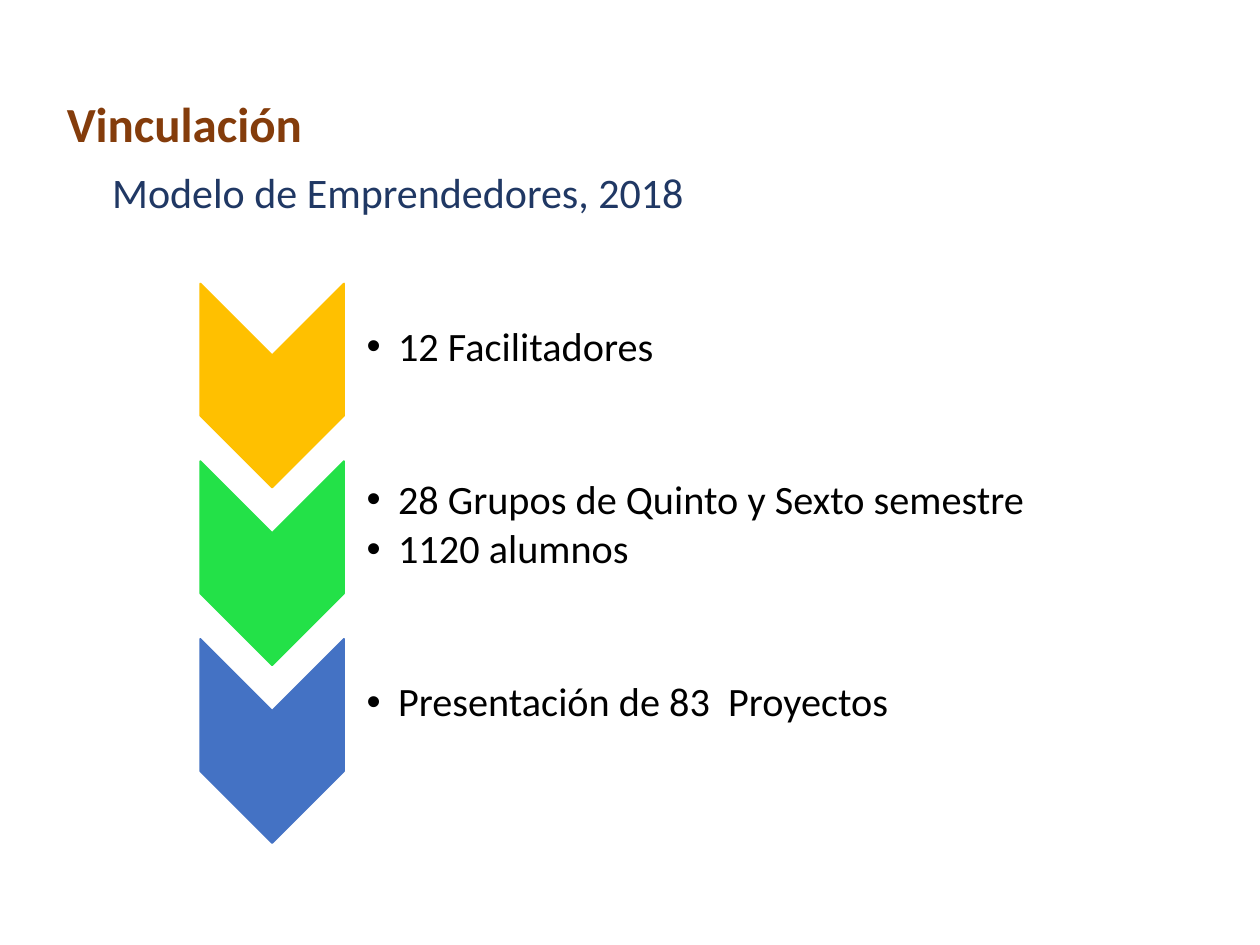
from lxml.etree import SubElement
from pptx import Presentation
from pptx.dml.color import RGBColor
from pptx.enum.shapes import MSO_SHAPE
from pptx.enum.text import MSO_ANCHOR, MSO_AUTO_SIZE, PP_ALIGN
from pptx.oxml.ns import qn
from pptx.util import Inches, Pt

BROWN = RGBColor(0x84, 0x3C, 0x0B)
NAVY = RGBColor(0x20, 0x38, 0x64)
BLACK = RGBColor(0x00, 0x00, 0x00)
AMBER = RGBColor(0xFF, 0xC0, 0x00)
GREEN = RGBColor(0x23, 0xE1, 0x48)
BLUE = RGBColor(0x44, 0x72, 0xC4)

FONT = "Calibri"
COMPARISON_LAYOUT = 4
STAGES = [
    (AMBER, ["12 Facilitadores"]),
    (GREEN, ["28 Grupos de Quinto y Sexto semestre", "1120 alumnos"]),
    (BLUE, ["Presentación de 83  Proyectos"]),
]
STAGE_TOP, STAGE_PITCH = 2.29, 1.41


def place(holder, left, top, width, height, anchor):
    holder.left, holder.top = Inches(left), Inches(top)
    holder.width, holder.height = Inches(width), Inches(height)
    frame = holder.text_frame
    frame.word_wrap = True
    frame.auto_size = MSO_AUTO_SIZE.NONE
    frame.vertical_anchor = anchor
    return frame


def style(paragraph, size, color, bold=False):
    paragraph.alignment = PP_ALIGN.LEFT
    paragraph.space_before = Pt(0)
    font = paragraph.font
    font.name, font.size, font.bold = FONT, Pt(size), bold
    font.color.rgb = color


def set_bullet(paragraph, indent):
    """Give the paragraph a round bullet, or none when indent is 0."""
    props = paragraph._p.get_or_add_pPr()
    props.set("marL", str(Inches(indent)))
    props.set("indent", str(-Inches(indent)))
    if indent:
        SubElement(props, qn("a:buFont"), typeface="Arial")
        SubElement(props, qn("a:buChar"), char="•")
    else:
        SubElement(props, qn("a:buNone"))


def fill_heading(holder, text, box, size, color, bold=False):
    frame = place(holder, *box, MSO_ANCHOR.TOP)
    frame.text = text
    heading = frame.paragraphs[0]
    set_bullet(heading, 0)
    style(heading, size, color, bold)


def fill_list(holder, items, top):
    frame = place(holder, 2.73, top, 5.48, 0.95, MSO_ANCHOR.MIDDLE)
    frame.margin_left = Inches(0.18)
    frame.margin_top = frame.margin_right = frame.margin_bottom = Inches(0.02)
    frame.text = "\n".join(items)
    for item in frame.paragraphs:
        set_bullet(item, 0.25)
        style(item, 23, BLACK)
        item.line_spacing = 0.9
        item.space_after = Pt(3.5)


def add_chevron(slide, color, top):
    chevron = slide.shapes.add_shape(
        MSO_SHAPE.CHEVRON, Inches(1.35), Inches(top), Inches(1.62), Inches(1.14))
    chevron.rotation = 90
    chevron.shadow.inherit = False
    chevron.fill.solid()
    chevron.fill.fore_color.rgb = color
    chevron.line.color.rgb = color
    chevron.line.width = Pt(1)


def main():
    deck = Presentation()
    deck.slide_width, deck.slide_height = Inches(10), Inches(7.5)
    slide = deck.slides.add_slide(deck.slide_layouts[COMPARISON_LAYOUT])
    title, subtitle, *lists = slide.placeholders

    fill_heading(title, "Vinculación", (0.43, 0.69, 5.96, 0.57), 28, BROWN, bold=True)
    fill_heading(subtitle, "Modelo de Emprendedores, 2018", (0.79, 1.27, 5.2, 0.5), 24, NAVY)
    for row, (holder, (color, items)) in enumerate(zip(lists, STAGES)):
        top = STAGE_TOP + row * STAGE_PITCH
        add_chevron(slide, color, top + 0.2)
        fill_list(holder, items, top)

    deck.save("out.pptx")


if __name__ == "__main__":
    main()
